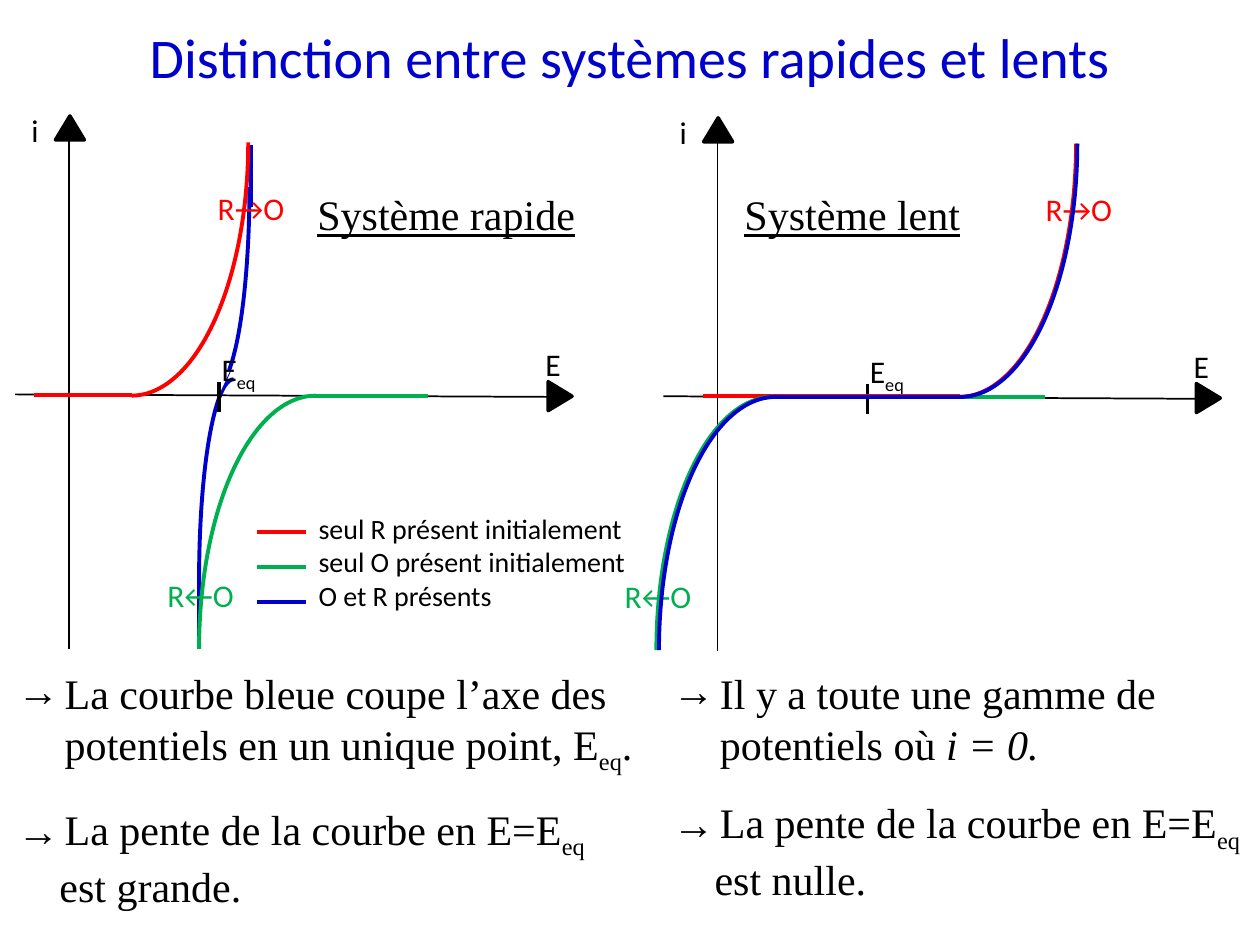
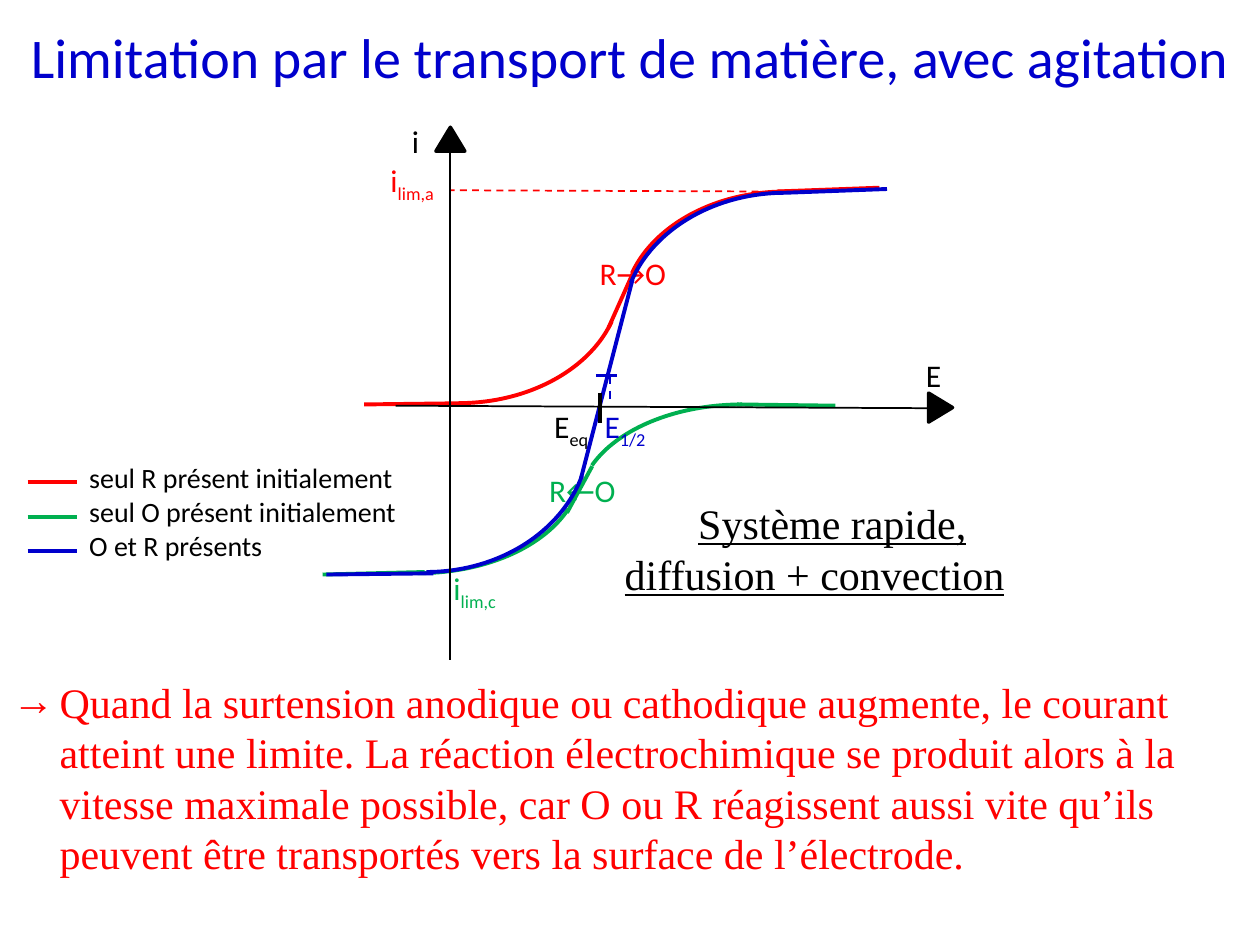
from dataclasses import dataclass
from typing import Optional, Union

from lxml.etree import SubElement
from pptx import Presentation
from pptx.dml.color import RGBColor
from pptx.enum.dml import MSO_LINE
from pptx.enum.shapes import MSO_CONNECTOR, MSO_SHAPE
from pptx.enum.text import PP_ALIGN
from pptx.oxml.ns import qn
from pptx.util import Emu, Inches, Pt

# Grid of 100 columns by 75 rows; every position below is in grid cells.
COLS, ROWS = 100, 75
CELL = Inches(0.1)

COLORS = {"blue": "0000CC", "red": "FF0000", "green": "00B050",
          "black": "000000", "white": "FFFFFF"}
SANS, SERIF = "Calibri", "Times New Roman"
HANG = 3.75
LEGEND = (("red", "seul R présent initialement"),
          ("green", "seul O présent initialement"),
          ("blue", "O et R présents"))


@dataclass(frozen=True)
class Run:
    text: str
    style: str = ""  # "sub", "i" or "u"


@dataclass(frozen=True)
class Para:
    runs: tuple[Run, ...]
    bullet: bool = False
    indent: float = 0
    before: float = 0
    align: Optional[PP_ALIGN] = None


@dataclass(frozen=True)
class Label:
    x: float
    y: float
    w: float
    h: float
    paras: tuple[Para, ...]
    color: str = "black"
    size: float = 18
    font: str = SANS


@dataclass(frozen=True)
class Seg:
    x1: float
    y1: float
    x2: float
    y2: float
    color: str = "black"
    width: float = 2.25
    dashed: bool = False


@dataclass(frozen=True)
class Arc:
    """Quarter ellipse; a short one stops before the side of its box."""
    x: float
    y: float
    w: float
    h: float
    flip: str
    color: str
    short: bool = False


@dataclass(frozen=True)
class Block:
    """Filled preset shape."""
    x: float
    y: float
    w: float
    h: float
    kind: MSO_SHAPE
    color: str
    rotation: float = 0
    outline: float = 0


Item = Union[Label, Seg, Arc, Block]


def cells(n: float) -> Emu:
    return Emu(round(n * CELL))


def rgb(name: str) -> RGBColor:
    return RGBColor.from_string(COLORS[name])


def line_of(*runs: Run) -> tuple[Para, ...]:
    return (Para(runs),)


def symbol(x: float, y: float, w: float, base: str, sub: str = "",
           color: str = "black") -> Label:
    runs = (Run(base), Run(sub, "sub")) if sub else (Run(base),)
    return Label(x, y, w, 4, line_of(*runs), color)


def add_label(slide, label: Label, dx: float, dy: float) -> None:
    tf = slide.shapes.add_textbox(cells(label.x + dx), cells(label.y + dy),
                                  cells(label.w), cells(label.h)).text_frame
    tf.word_wrap = True
    for i, para in enumerate(label.paras):
        p = tf.paragraphs[0] if i == 0 else tf.add_paragraph()
        if para.align is not None:
            p.alignment = para.align
        if para.before:
            p.space_before = Pt(para.before)
        pPr = p._p.get_or_add_pPr()
        if para.bullet:
            pPr.set("marL", str(cells(HANG)))
            pPr.set("indent", str(-cells(HANG)))
            SubElement(pPr, qn("a:buFont")).set("typeface", label.font)
            SubElement(pPr, qn("a:buChar")).set("char", "→")
        elif para.indent:
            pPr.set("marL", str(cells(para.indent)))
        for run in para.runs:
            r = p.add_run()
            r.text = run.text
            r.font.name, r.font.size = label.font, Pt(label.size)
            r.font.color.rgb = rgb(label.color)
            if run.style == "i":
                r.font.italic = True
            elif run.style == "u":
                r.font.underline = True
            elif run.style == "sub":
                r._r.get_or_add_rPr().set("baseline", "-25000")


def add_seg(slide, seg: Seg, dx: float, dy: float) -> None:
    s = slide.shapes.add_connector(
        MSO_CONNECTOR.STRAIGHT, cells(seg.x1 + dx), cells(seg.y1 + dy),
        cells(seg.x2 + dx), cells(seg.y2 + dy))
    s.line.color.rgb, s.line.width = rgb(seg.color), Pt(seg.width)
    if seg.dashed:
        s.line.dash_style = MSO_LINE.DASH
    SubElement(s._element.spPr, qn("a:effectLst"))


def add_preset(slide, kind: MSO_SHAPE, item: Union[Arc, Block], dx: float, dy: float):
    s = slide.shapes.add_shape(kind, cells(item.x + dx), cells(item.y + dy),
                               cells(item.w), cells(item.h))
    s.shadow.inherit = False
    return s


def add_arc(slide, arc: Arc, dx: float, dy: float) -> None:
    s = add_preset(slide, MSO_SHAPE.ARC, arc, dx, dy)
    s.fill.background()
    s.line.color.rgb, s.line.width = rgb(arc.color), Pt(2.25)
    s._element.spPr.find(qn("a:xfrm")).set(arc.flip, "1")
    if arc.short:
        s.adjustments[0], s.adjustments[1] = 162, 206.95


def add_block(slide, block: Block, dx: float, dy: float) -> None:
    s = add_preset(slide, block.kind, block, dx, dy)
    s.rotation = block.rotation
    s.fill.solid()
    s.fill.fore_color.rgb = rgb(block.color)
    if block.outline:
        s.line.color.rgb, s.line.width = rgb(block.color), Pt(block.outline)
    else:
        s.line.fill.background()


DRAW = {Label: add_label, Seg: add_seg, Arc: add_arc, Block: add_block}


def draw(slide, items: tuple[Item, ...], dx: float = 0, dy: float = 0) -> None:
    """Draw items in order, shifted by dx columns and dy rows."""
    for item in items:
        DRAW[type(item)](slide, item, dx, dy)


def add_titled_slide(prs, title: str):
    slide = prs.slides.add_slide(prs.slide_layouts[6])
    para = Para((Run(title),), align=PP_ALIGN.CENTER)
    draw(slide, (Label(0, 1.3, COLS, 6.4, (para,), "blue", 32),))
    return slide


def draw_legend(slide, x: float, y: float) -> None:
    paras = tuple(Para((Run(text),), indent=5) for _, text in LEGEND)
    draw(slide, (Label(x, y, 33.5, 9.4, paras, size=16),))
    for i, (color, _) in enumerate(LEGEND):
        level = y + 2.15 + 2.75 * i
        draw(slide, (Seg(x + 1.1, level, x + 5, level, color),))


AXES = (
    Seg(1.2, 31.3, 43.7, 31.5, width=1),
    Seg(5.5, 10.9, 5.5, 51.5, width=1),
    Block(4.4, 9.2, 2.3, 1.9, MSO_SHAPE.ISOSCELES_TRIANGLE, "black", 0, 2),
    Block(43.3, 30.5, 2.3, 1.9, MSO_SHAPE.ISOSCELES_TRIANGLE, "black", 90, 2),
    Seg(17.4, 30.3, 17.4, 32.7, width=2),
    symbol(42.3, 26.9, 5.9, "E"),
    symbol(1.5, 8.3, 3.9, "i"),
)
E_EQ = symbol(16.6, 27.3, 7.9, "E", "eq")

OXIDATION = (
    Arc(1.2, -8.8, 18.5, 40.2, "flipV", "red"),
    Seg(10.5, 31.35, 2.7, 31.35, "red"),
    symbol(16.3, 14.5, 17, "R→O", color="red"),
)
REDUCTION = (
    Arc(15.8, 31.4, 18.5, 40.2, "flipH", "green"),
    Seg(24.7, 31.4, 34, 31.4, "green"),
    symbol(12.3, 45.2, 17.1, "R←O", color="green"),
)
FAST_BOTH = (
    Arc(15.8, 30.1, 5.5, 31.9, "flipH", "blue"),
    Arc(14.3, -1.1, 5.5, 31.9, "flipV", "blue"),
    Block(15.4, 28.8, 2.5, 2.3, MSO_SHAPE.RECTANGLE, "white", 24.6),
    Seg(19.9, 16.4, 19.9, 11.5, "blue"),
    Seg(15.8, 46, 15.8, 51, "blue"),
)
SLOW_BOTH = (
    Arc(67, -8.7, 18.5, 40.2, "flipV", "blue"),
    Seg(76.5, 31.5, 68.7, 31.5, "blue"),
    Arc(52.3, 31.5, 18.5, 40.2, "flipH", "blue"),
    Seg(61.1, 31.5, 70.4, 31.5, "blue"),
)

LIMITED_OXIDATION = (
    symbol(46.6, 19.7, 22.8, "R→O", color="red"),
    Seg(61.7, 15.2, 69.8, 14.9, "red"),
    Arc(49.4, 15.2, 25.8, 19.5, "flipH", "red", True),
    Arc(23.5, 12.5, 25.8, 19.5, "flipV", "red", True),
    Seg(48.3, 26, 50.4, 21.3, "red"),
    Seg(28.9, 32.1, 37, 32, "red"),
)
LIMITED_REDUCTION = (
    symbol(42.6, 36.9, 22.8, "R←O", color="green"),
    Seg(58.5, 32.1, 66.3, 32.2, "green"),
    Arc(45.9, 32.1, 26, 16.1, "flipH", "green", True),
    Arc(20.2, 28.9, 25.9, 16.6, "flipV", "green", True),
    Seg(45, 40.7, 47, 37, "green"),
    Seg(25.6, 45.6, 33.7, 45.4, "green"),
)
LIMITED_BOTH = (
    Seg(62.3, 15.3, 70.4, 15, "blue"),
    Seg(46.1, 38, 50.2, 22.2, "blue"),
    Arc(49.4, 15.3, 25.8, 20.9, "flipH", "blue", True),
    Arc(20.9, 23.5, 25.9, 21.9, "flipV", "blue", True),
    Seg(25.9, 45.6, 34.4, 45.5, "blue"),
)
LIMIT_CURRENTS = (
    Seg(60.2, 15.2, 35.7, 15.1, "red", 1, True),
    symbol(30, 12.3, 8.9, "i", "lim,a", "red"),
    symbol(35, 44.7, 8.9, "i", "lim,c", "green"),
)
HALF_WAVE = (
    Seg(48.4, 29.8, 48.4, 32.2, "blue", 1.25, True),
    symbol(47, 31.8, 7.1, "E", "1/2", "blue"),
    Seg(47.3, 29.8, 49, 29.8, "blue", 1.25),
)


def serif(x: float, y: float, w: float, h: float, *paras: Para, color: str = "black") -> Label:
    return Label(x, y, w, h, paras, color, 24, SERIF)


def conclusions(x: float, w: float, first: tuple[Run, ...], slope: str) -> Label:
    """Two arrowed remarks; the second gives the slope at equilibrium."""
    return serif(
        x, 52.5, w, 19.5, Para(first, bullet=True),
        Para((Run("La pente de la courbe en E=E"), Run("eq", "sub")), bullet=True, before=16),
        Para((Run(f"est {slope}."),), indent=3.33))


def build_fast_and_slow(prs) -> None:
    slide = add_titled_slide(prs, "Distinction entre systèmes rapides et lents")
    draw(slide, FAST_BOTH)
    draw(slide, AXES + (E_EQ,))
    draw(slide, AXES + (E_EQ,), 51.45, 0.15)
    draw(slide, OXIDATION)
    draw(slide, REDUCTION)
    draw(slide, OXIDATION, 65.7, 0.1)
    draw(slide, (Seg(68.4, 31.45, 55.8, 31.45, "red"),))
    draw(slide, REDUCTION, 36.3, 0.1)
    draw(slide, (Seg(69.7, 31.5, 82.9, 31.5, "green"),))
    draw(slide, SLOW_BOTH)
    draw(slide, (
        conclusions(0.4, 51.2, (
            Run("La courbe bleue coupe l’axe des potentiels en un unique point, E"),
            Run("eq", "sub"), Run(".")), "grande"),
        conclusions(52.4, 47.2, (
            Run("Il y a toute une gamme de potentiels où "),
            Run("i = 0.", "i")), "nulle"),
        serif(24.2, 14.5, 24.8, 5, Para((Run("Système rapide", "u"),))),
        serif(58.1, 14.5, 19.5, 5, Para((Run("Système lent", "u"),))),
    ))
    draw_legend(slide, 19.3, 40.1)


def build_transport_limit(prs) -> None:
    slide = add_titled_slide(prs, "Limitation par le transport de matière, avec agitation")
    draw(slide, LIMITED_OXIDATION + LIMITED_REDUCTION + LIMITED_BOTH + LIMIT_CURRENTS)
    remark = Run("Quand la surtension anodique ou cathodique augmente, le courant atteint "
                 "une limite. La réaction électrochimique se produit alors à la vitesse "
                 "maximale possible, car O ou R réagissent aussi vite qu’ils peuvent être "
                 "transportés vers la surface de l’électrode.")
    draw(slide, (
        serif(48.6, 39, 32.9, 9.1, Para((Run("Système rapide,", "u"),), indent=5.83),
              Para((Run("diffusion + convection", "u"),))),
        serif(0, 53.2, COLS, 17.2, Para((remark,), bullet=True), color="red"),
    ))
    draw_legend(slide, 1.1, 36.1)
    draw(slide, AXES, 30.2, 0.9)
    draw(slide, (symbol(43, 31.8, 7.9, "E", "eq"),) + HALF_WAVE)


def main() -> None:
    prs = Presentation()
    prs.slide_width, prs.slide_height = cells(COLS), cells(ROWS)
    build_fast_and_slow(prs)
    build_transport_limit(prs)
    prs.save("out.pptx")


if __name__ == "__main__":
    main()
